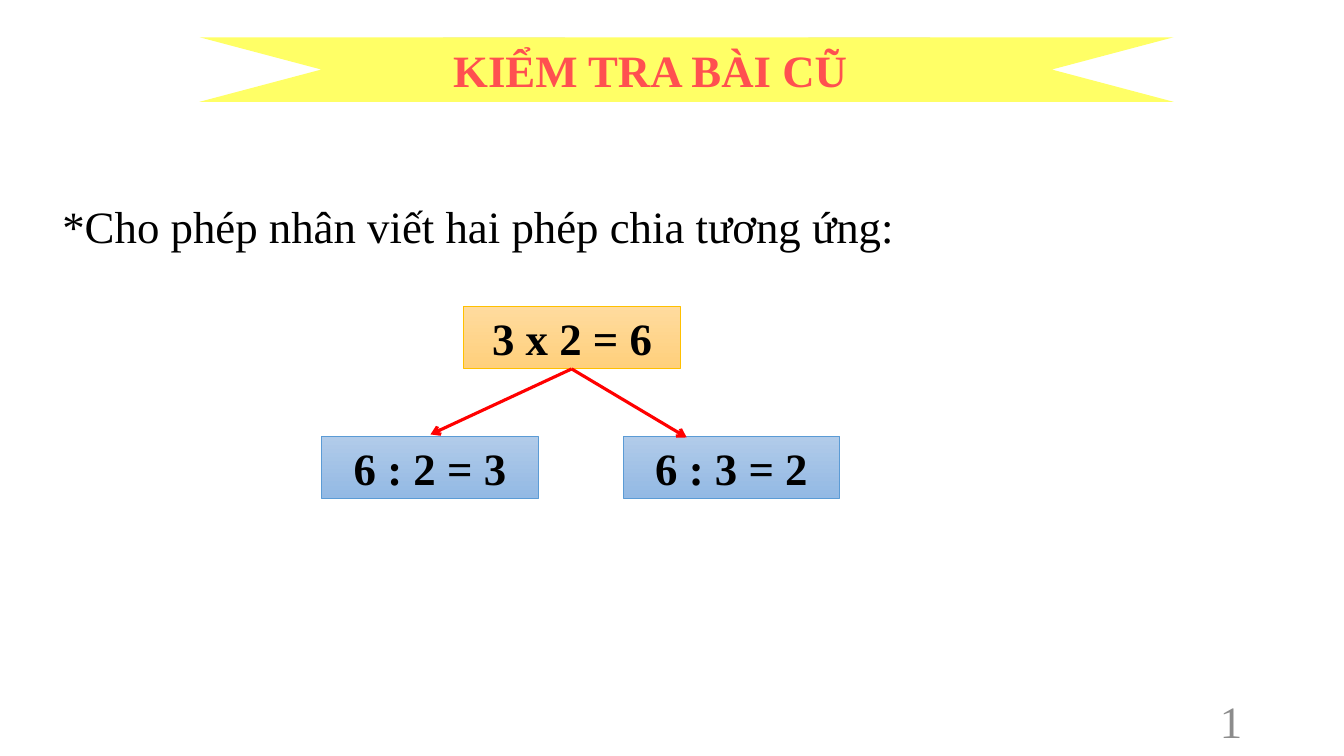
from pptx import Presentation
from pptx.dml.color import RGBColor as RGB
from pptx.enum.shapes import MSO_CONNECTOR as Link, MSO_SHAPE as Shape
from pptx.enum.text import MSO_ANCHOR as Anchor, PP_ALIGN as Align
from pptx.oxml.ns import qn
from pptx.util import Inches, Pt
from lxml.etree import SubElement

COLORS = {
    "banner": "FFFF66", "title": "FF5050", "text": "000000",
    "page": "8C8C8C", "paper": "FFFFFF", "arrow": "FF0000",
}
WARM = ("FFDB9E", "FFD07C", "FFC000")  # top, bottom, border
COOL = ("B1CBE9", "93B9E4", "5B9BD5")

TITLE = "KIỂM TRA BÀI CŨ"
TASK = "*Cho phép nhân viết hai phép chia tương ứng:"
BANNER = (1.98, 0.37, 9.66, 0.64)
FOLD = 0.5  # share of the banner that holds the title
BOX = (2.15, 0.61)
SUMS = [
    ("3 x 2 = 6", 4.6, 3.04, WARM),
    ("6 : 2 = 3", 3.19, 4.33, COOL),
    ("6 : 3 = 2", 6.18, 4.33, COOL),
]
START = (5.67, 3.66)
ENDS = [(4.27, 4.31), (6.81, 4.34)]


def color(name):
    return RGB.from_string(COLORS[name])


def place(shape, box):
    for side, value in zip(("left", "top", "width", "height"), box):
        setattr(shape, side, Inches(value))


def write(shape, text, ink="text", bold=False, align=Align.LEFT,
          anchor=Anchor.TOP, wrap=True):
    frame = shape.text_frame
    frame.text = text
    frame.word_wrap = wrap
    frame.vertical_anchor = anchor
    para = frame.paragraphs[0]
    para.alignment = align
    font = para.runs[0].font
    look = {"name": "Times New Roman", "size": Pt(32), "bold": bold}
    for key, value in look.items():
        setattr(font, key, value)
    font.color.rgb = color(ink)


def add_shape(slide, kind, box):
    shape = slide.shapes.add_shape(kind, *map(Inches, box))
    shape.shadow.inherit = False
    return shape


def add_sum(slide, text, left, top, tones):
    shape = add_shape(slide, Shape.RECTANGLE, (left, top, *BOX))
    shape.fill.gradient()
    shape.fill.gradient_angle = 270
    for stop, tone in zip(shape.fill.gradient_stops, tones):
        stop.color.rgb = RGB.from_string(tone)
    shape.line.color.rgb = RGB.from_string(tones[2])
    shape.line.width = Pt(0.5)
    write(shape, text, bold=True, align=Align.CENTER, anchor=Anchor.MIDDLE)


def add_arrow(slide, start, end):
    arrow = slide.shapes.add_connector(
        Link.STRAIGHT, *map(Inches, (*start, *end)))
    arrow.line.color.rgb = color("arrow")
    arrow.line.width = Pt(2.25)
    SubElement(arrow.line._get_or_add_ln(), qn("a:tailEnd"), type="arrow")
    SubElement(arrow._element.spPr, qn("a:effectLst"))


def main():
    deck = Presentation()
    deck.slide_width, deck.slide_height = Inches(13.33), Inches(7.5)
    slide = deck.slides.add_slide(deck.slide_layouts[5])

    ribbon = add_shape(slide, Shape.DOWN_RIBBON, BANNER)
    ribbon.adjustments[0], ribbon.adjustments[1] = 0, FOLD
    ribbon.fill.solid()
    ribbon.fill.fore_color.rgb = color("banner")
    ribbon.line.fill.background()

    title = slide.shapes.title
    left, top, width, height = BANNER
    place(title, (left + width * (1 - FOLD) / 2, top, width * FOLD, height))
    write(title, TITLE, "title", bold=True)
    slide.shapes._spTree.append(title._element)  # bring in front of the ribbon

    task = add_shape(slide, Shape.RECTANGLE, (0.52, 1.92, 8.53, 0.64))
    task.fill.solid()
    task.fill.fore_color.rgb = color("paper")
    task.line.color.rgb = color("paper")
    write(task, TASK, wrap=False)

    for item in SUMS:
        add_sum(slide, *item)
    for end in ENDS:
        add_arrow(slide, START, end)

    page = slide.shapes.add_textbox(*map(Inches, (9.42, 6.95, 3, 0.4)))
    write(page, "1", "page", align=Align.RIGHT, anchor=Anchor.MIDDLE)

    deck.save("out.pptx")


if __name__ == "__main__":
    main()
